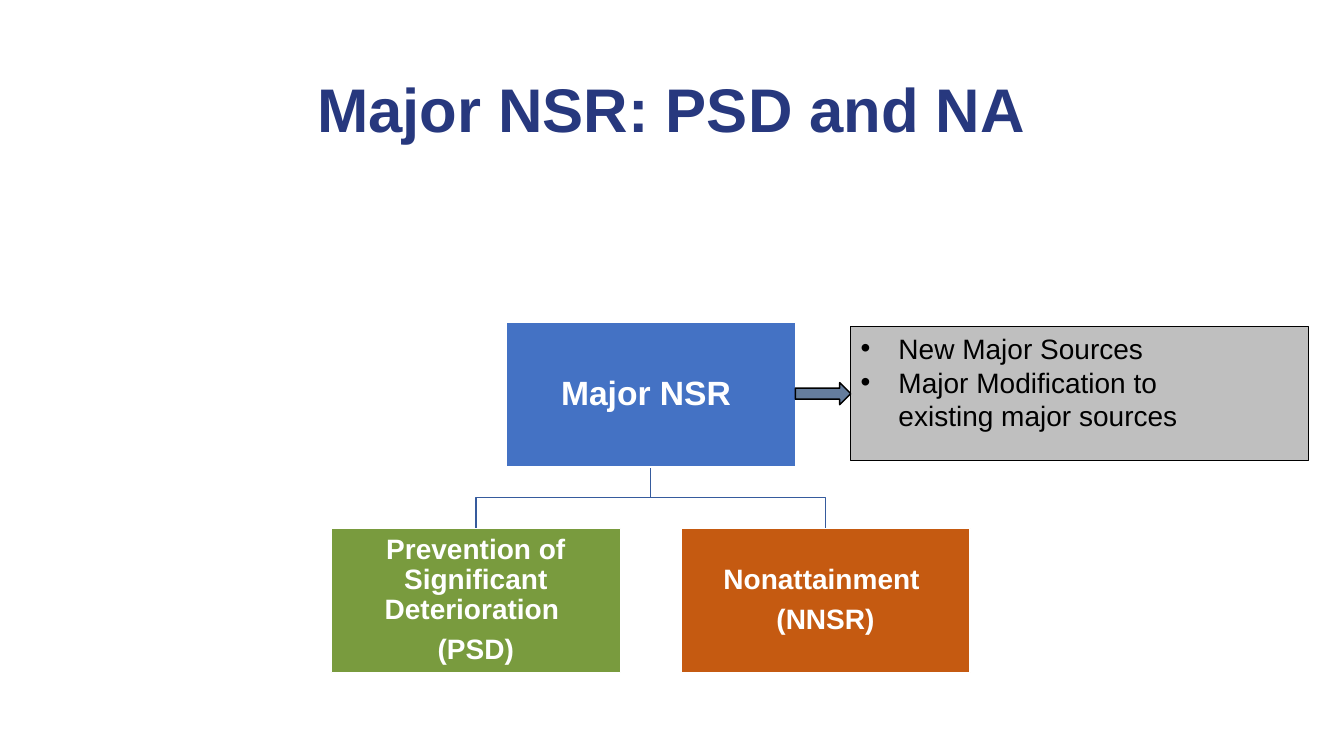
from lxml import etree
from pptx import Presentation
from pptx.dml.color import RGBColor
from pptx.enum import shapes, text
from pptx.oxml import ns
from pptx.util import Pt

TITLE = "Major NSR: PSD and NA"
ROOT = (["Major NSR "], "4472C4", 24)
CHILDREN = [
    (["Prevention of Significant Deterioration ", "(PSD)"], "799B3E", 20),
    (["Nonattainment ", "(NNSR)"], "C55A11", 20),
]
SOURCES = ["New Major Sources", "Major Modification to\vexisting major sources"]

BOX_W, BOX_H = 206.6, 103.2
ROOT_X, ROOT_Y = 464.8, 230.4  # top centre of the root box
CHILD_Y, CHILD_STEP = 377.3, 249.8
LIST_X, LIST_Y, LIST_W, LIST_H = 607.7, 233.3, 326.9, 95.8
ARROW_H = 15.8
BULLET_INDENT = 27


def color(hex_code):
    return RGBColor.from_string(hex_code)


def set_font(para, size, hex_code, bold=False):
    para.font.name = "Arial"
    para.font.size = Pt(size)
    para.font.bold = bold
    para.font.color.rgb = color(hex_code)


def add_block(kind, x, y, w, h, fill, line):
    block = page.shapes.add_shape(kind, Pt(x), Pt(y), Pt(w), Pt(h))
    block.shadow.inherit = False
    block.fill.solid()
    block.fill.fore_color.rgb = color(fill)
    block.line.color.rgb = color(line)
    block.line.width = Pt(1)
    return block


def write_centered(frame, lines, size, hex_code):
    frame.word_wrap = True
    frame.text = "\n".join(lines)
    for i, para in enumerate(frame.paragraphs):
        para.alignment = text.PP_ALIGN.CENTER
        para.line_spacing = 0.9
        if i:
            para.space_before = Pt(7)
        set_font(para, size, hex_code, bold=True)


def add_node(center_x, y, lines, fill, size):
    node = add_block(shapes.MSO_SHAPE.RECTANGLE, center_x - BOX_W / 2, y,
                     BOX_W, BOX_H, fill, "FFFFFF")
    frame = node.text_frame
    frame.margin_left = frame.margin_right = Pt(1)
    frame.margin_top = frame.margin_bottom = Pt(1)
    frame.vertical_anchor = text.MSO_ANCHOR.MIDDLE
    write_centered(frame, lines, size, "FFFFFF")


def add_branch(child_x):
    """Draw the elbow line from the root box down to a child box."""
    top = ROOT_Y + BOX_H
    middle = (top + CHILD_Y) / 2
    builder = page.shapes.build_freeform(Pt(ROOT_X), Pt(top))
    corners = [(ROOT_X, middle), (child_x, middle), (child_x, CHILD_Y)]
    builder.add_line_segments([(Pt(x), Pt(y)) for x, y in corners], close=False)
    branch = builder.convert_to_shape()
    branch.shadow.inherit = False
    branch.fill.background()
    branch.line.color.rgb = color("365B9D")
    branch.line.width = Pt(1)


def add_bullet(para):
    props = para._p.get_or_add_pPr()
    props.set("marL", str(Pt(BULLET_INDENT)))
    props.set("indent", str(-Pt(BULLET_INDENT)))
    etree.SubElement(props, ns.qn("a:buFont"), typeface="Arial")
    etree.SubElement(props, ns.qn("a:buChar"), char="•")


deck = Presentation()
deck.slide_width, deck.slide_height = Pt(960), Pt(540)
page = deck.slides.add_slide(deck.slide_layouts[6])

title = page.shapes.add_textbox(Pt(48.2), Pt(53.3), Pt(863.3), Pt(104.4))
write_centered(title.text_frame, [TITLE], 44, "27387E")

child_centers = [ROOT_X + (i - (len(CHILDREN) - 1) / 2) * CHILD_STEP
                 for i in range(len(CHILDREN))]
for child_x in child_centers:
    add_branch(child_x)
add_node(ROOT_X, ROOT_Y, *ROOT)
for child_x, child in zip(child_centers, CHILDREN):
    add_node(child_x, CHILD_Y, *child)

source_box = add_block(shapes.MSO_SHAPE.RECTANGLE, LIST_X, LIST_Y,
                       LIST_W, LIST_H, "BFBFBF", "000000")
frame = source_box.text_frame
frame.word_wrap = True
frame.vertical_anchor = text.MSO_ANCHOR.TOP
frame.text = "\n".join(SOURCES)
for para in frame.paragraphs:
    add_bullet(para)
    para.alignment = text.PP_ALIGN.LEFT
    set_font(para, 20, "000000")

arrow_x = ROOT_X + BOX_W / 2
add_block(shapes.MSO_SHAPE.RIGHT_ARROW, arrow_x,
          LIST_Y + (LIST_H - ARROW_H) / 2, LIST_X - arrow_x, ARROW_H,
          "657D9D", "000000")

deck.save("out.pptx")
